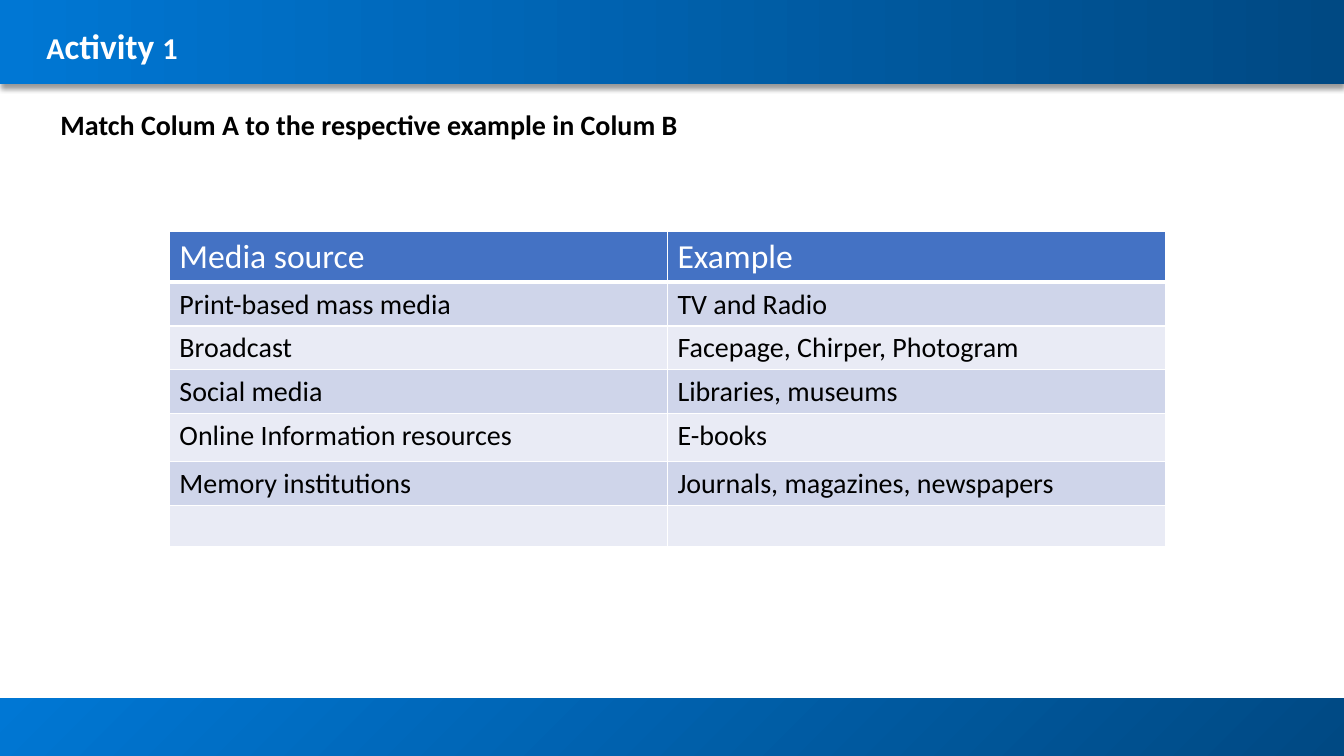
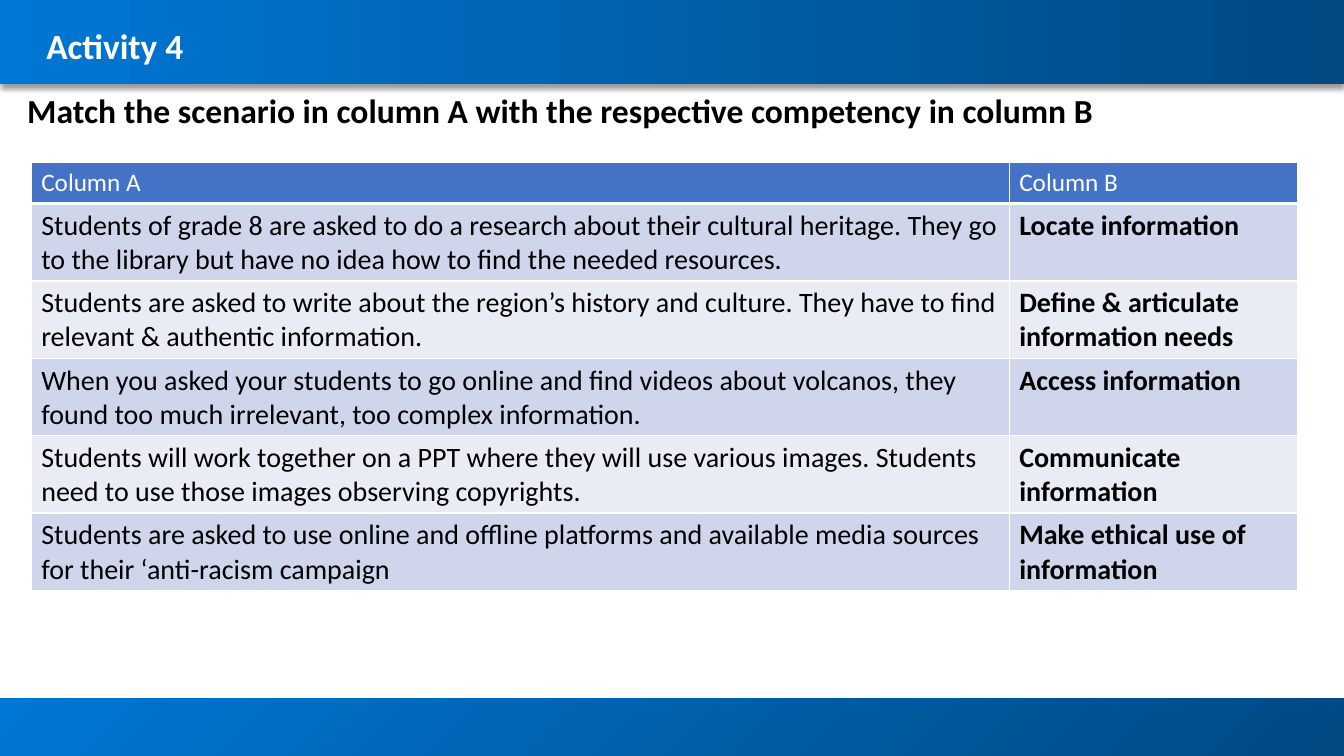
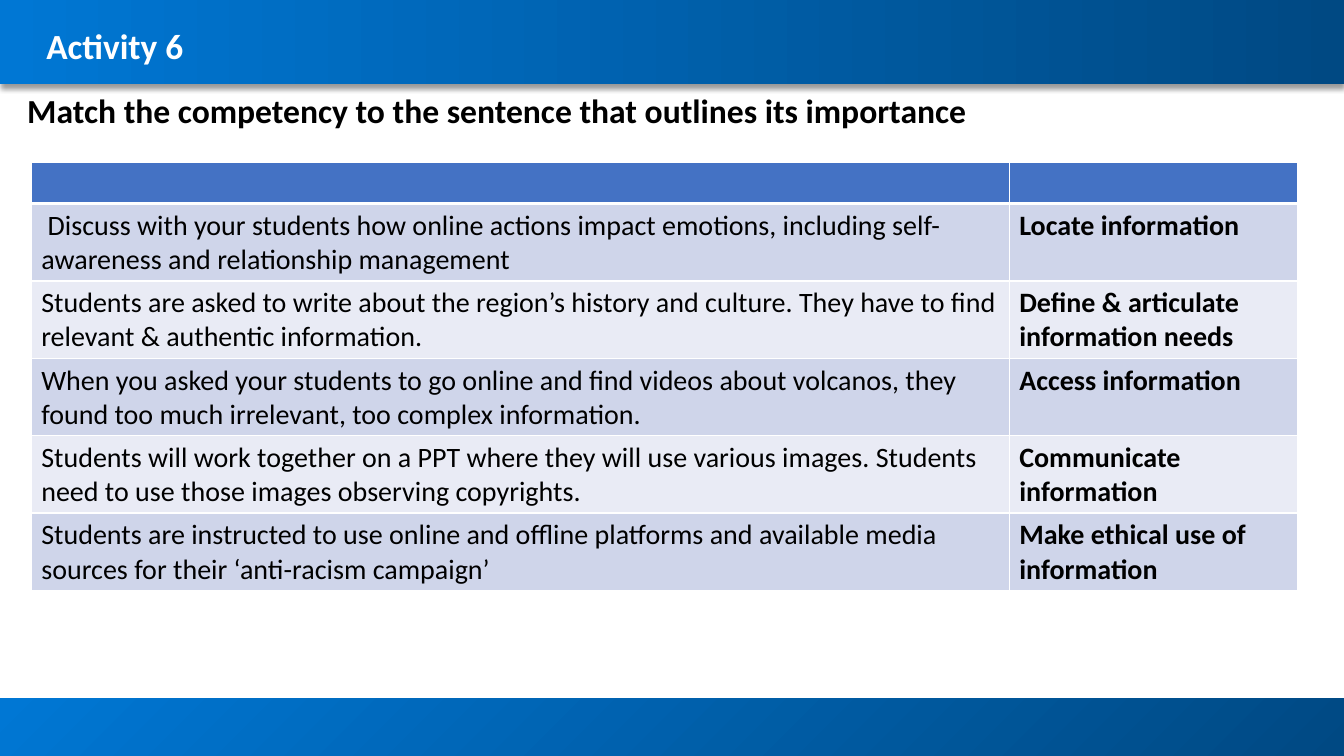
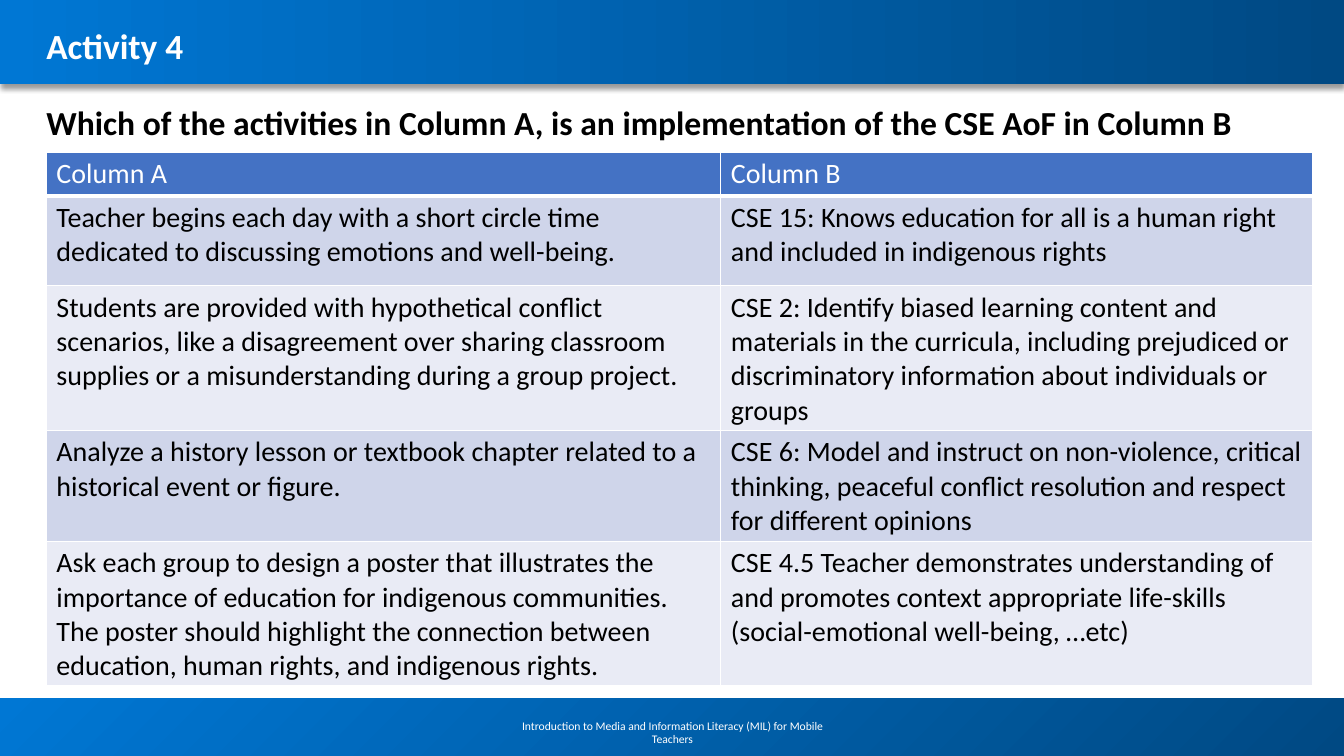
from dataclasses import dataclass

from lxml import etree
from pptx import Presentation
from pptx.dml.color import RGBColor
from pptx.enum.shapes import MSO_SHAPE as Preset
from pptx.enum.text import MSO_ANCHOR as Anchor, PP_ALIGN as Align
from pptx.oxml.ns import qn
from pptx.util import Inches, Pt

WHITE, BLACK = "FFFFFF", "000000"
BRIGHT, DEEP = "0077D4", "004983"
HEADER_FILL = "4472C4"
STRIPES = ("CFD5EA", "E9EBF5")
FONT = "Calibri"
SLIDE_WIDTH, SLIDE_HEIGHT = 13.33, 7.5
FOOTER_TOP = 6.93
FOOTER_TEXT = "Introduction to Media and Information Literacy (MIL) for Mobile Teachers"


@dataclass(frozen=True)
class Box:
    left: float
    top: float
    width: float
    height: float

    def lengths(self) -> tuple:
        return tuple(map(Inches, (self.left, self.top, self.width, self.height)))


@dataclass(frozen=True)
class Span:
    text: str
    size: float
    color: str = BLACK
    bold: bool = False


@dataclass(frozen=True)
class Grid:
    box: Box
    columns: tuple
    heights: tuple
    rows: tuple
    header_size: float
    bold_answers: bool = False


@dataclass(frozen=True)
class Activity:
    title: tuple
    task: Span
    task_box: Box
    grid: Grid
    footer: str = ""


TITLE_BOX = Box(0.46, 0.17, 12.41, 0.5)
FOOTER_BOX = Box(4.89, 7.1, 3.56, 0.24)


def color(value: str) -> RGBColor:
    return RGBColor.from_string(value)


def apply(target, values: dict) -> None:
    for name, value in values.items():
        setattr(target, name, value)


def write(paragraph, spans: tuple, layout: dict) -> None:
    apply(paragraph, layout)
    for span in spans:
        run = paragraph.add_run()
        run.text = span.text
        apply(run.font, {"name": FONT, "size": Pt(span.size), "bold": span.bold})
        run.font.color.rgb = color(span.color)


def add_text(slide, box: Box, spans: tuple, frame: dict, layout: dict) -> None:
    text_frame = slide.shapes.add_textbox(*box.lengths()).text_frame
    apply(text_frame, {"word_wrap": True, **frame})
    write(text_frame.paragraphs[0], spans, layout)


def add_band(slide, box: Box, stops: tuple, angle: float):
    band = slide.shapes.add_shape(Preset.RECTANGLE, *box.lengths())
    band.shadow.inherit = False
    band.line.fill.background()
    band.fill.gradient()
    band.fill.gradient_angle = angle
    for stop, value in zip(band.fill.gradient_stops, stops):
        stop.color.rgb = color(value)
    return band


def add_shadow(shape) -> None:
    effects = shape.element.spPr.find(qn("a:effectLst"))
    shadow = etree.SubElement(
        effects, qn("a:outerShdw"), blurRad=str(Pt(4)), dist=str(Pt(3)),
        dir="5400000", algn="t", rotWithShape="0")
    tone = etree.SubElement(shadow, qn("a:srgbClr"), val=BLACK)
    etree.SubElement(tone, qn("a:alpha"), val="40000")


def add_borders(cell, widths: dict) -> None:
    properties = cell._tc.get_or_add_tcPr()
    for position, (side, width) in enumerate(widths.items()):
        line = etree.Element(qn(f"a:ln{side}"), w=str(Pt(width)))
        fill = etree.SubElement(line, qn("a:solidFill"))
        etree.SubElement(fill, qn("a:srgbClr"), val=WHITE)
        properties.insert(position, line)


def add_grid(slide, grid: Grid) -> None:
    frame = slide.shapes.add_table(
        len(grid.rows), len(grid.columns), *grid.box.lengths())
    table = frame.table
    for column, width in zip(table.columns, grid.columns):
        column.width = Inches(width)
    for row, height in zip(table.rows, grid.heights):
        row.height = Inches(height)
    frame.height = Inches(grid.box.height)
    for r, texts in enumerate(grid.rows):
        header = r == 0
        for c, text in enumerate(texts):
            cell = table.cell(r, c)
            cell.fill.solid()
            cell.fill.fore_color.rgb = color(
                HEADER_FILL if header else STRIPES[(r - 1) % 2])
            add_borders(cell, {"L": 1, "R": 1, "T": 1, "B": 3 if header else 1})
            if not text:
                continue
            span = (Span(text, grid.header_size, WHITE) if header
                    else Span(text, 20, bold=grid.bold_answers and c == 1))
            write(cell.text_frame.paragraphs[0], (span,), {})


def add_activity(deck, activity: Activity) -> None:
    slide = deck.slides.add_slide(deck.slide_layouts[6])
    add_band(slide, Box(0, FOOTER_TOP, SLIDE_WIDTH, SLIDE_HEIGHT - FOOTER_TOP),
             (DEEP, BRIGHT), 135)
    add_shadow(add_band(slide, Box(0, 0, SLIDE_WIDTH, 0.83), (BRIGHT, DEEP), 0))
    if activity.footer:
        add_text(slide, FOOTER_BOX, (Span(activity.footer, 8.3, WHITE),), {},
                 {"alignment": Align.CENTER, "line_spacing": 0.9})
    flush = dict.fromkeys(
        ("margin_left", "margin_top", "margin_right", "margin_bottom"), Inches(0))
    add_text(slide, activity.task_box, (activity.task,), flush, {})
    add_text(slide, TITLE_BOX, activity.title,
             {**flush, "vertical_anchor": Anchor.MIDDLE}, {"line_spacing": 1.16})
    add_grid(slide, activity.grid)


def heading(text: str, size: float = 25.2) -> Span:
    return Span(text, size, WHITE, True)


def competency_grid(header: tuple, first: str, last: str) -> Grid:
    scenarios = (
        first,
        "Students are asked to write about the region’s history and culture. "
        "They have to find relevant & authentic information.",
        "When you asked your students to go online and find videos about volcanos, "
        "they found too much irrelevant, too complex information.",
        "Students will work together on a PPT where they will use various images. "
        "Students need to use those images observing copyrights.",
        last,
    )
    competencies = (
        "Locate information",
        "Define & articulate information needs",
        "Access information",
        "Communicate information",
        "Make ethical use of information",
    )
    return Grid(Box(0.31, 1.61, 12.57, 4.24), (9.7, 2.86),
                (0.41, 0.41, 0.41, 0.41, 0.57, 0.41),
                (header, *zip(scenarios, competencies)), 18, True)


COMPETENCY_TASK_BOX = Box(0.27, 0.89, 12.41, 0.5)
COLUMN_NAMES = ("Column A", "Column B")

MEDIA_GRID = Grid(
    Box(1.68, 2.3, 9.88, 3.12), (4.94, 4.94),
    (0.41, 0.41, 0.41, 0.41, 0.48, 0.41, 0.41),
    (
        ("Media source", "Example"),
        ("Print-based mass media", "TV and Radio"),
        ("Broadcast", "Facepage, Chirper, Photogram"),
        ("Social media", "Libraries, museums"),
        ("Online Information resources", "E-books"),
        ("Memory institutions", "Journals, magazines, newspapers"),
        ("", ""),
    ), 24)

CSE_GRID = Grid(
    Box(0.46, 1.51, 12.57, 5.29), (6.69, 5.87), (0.38, 0.89, 0.85, 0.85, 0.85),
    (
        COLUMN_NAMES,
        ("Teacher begins each day with a short circle time dedicated to discussing "
         "emotions and well-being.",
         "CSE 15: Knows education for all is a human right and included in "
         "indigenous rights"),
        ("Students are provided with hypothetical conflict scenarios, like a "
         "disagreement over sharing classroom supplies or a misunderstanding "
         "during a group project.",
         "CSE 2: Identify biased learning content and materials in the curricula, "
         "including prejudiced or discriminatory information about individuals or "
         "groups"),
        ("Analyze a history lesson or textbook chapter related to a historical "
         "event or figure.",
         "CSE 6: Model and instruct on non-violence, critical thinking, peaceful "
         "conflict resolution and respect for different opinions"),
        ("Ask each group to design a poster that illustrates the importance of "
         "education for indigenous communities. The poster should highlight the "
         "connection between education, human rights, and indigenous rights.",
         "CSE 4.5 Teacher demonstrates understanding of and promotes context "
         "appropriate life-skills (social-emotional well-being, …etc)"),
    ), 20)

ACTIVITIES = (
    Activity(
        (heading("A", 21.6), heading("ctivity "), heading("1", 21.6)),
        Span("Match Colum A to the respective example in Colum B", 20, bold=True),
        Box(0.6, 1.07, 12.04, 5.87), MEDIA_GRID),
    Activity(
        (heading("Activity 4"),),
        Span("Match the scenario in column A with the respective competency in "
             "column B", 24, bold=True),
        COMPETENCY_TASK_BOX,
        competency_grid(
            COLUMN_NAMES,
            "Students of grade 8 are asked to do a research about their cultural "
            "heritage. They go to the library but have no idea how to find the "
            "needed resources.",
            "Students are asked to use online and offline platforms and available "
            "media sources for their ‘anti-racism campaign")),
    Activity(
        (heading("Activity 6"),),
        Span("Match the competency to the sentence that outlines its importance",
             24, bold=True),
        COMPETENCY_TASK_BOX,
        competency_grid(
            ("", ""),
            " Discuss with your students how online actions impact emotions, "
            "including self-awareness and relationship management",
            "Students are instructed to use online and offline platforms and "
            "available media sources for their ‘anti-racism campaign’")),
    Activity(
        (heading("Activity 4"),),
        Span("Which of the activities in Column A, is an implementation of the CSE "
             "AoF in Column B", 24, bold=True),
        Box(0.46, 1.01, 12.41, 0.5), CSE_GRID, FOOTER_TEXT),
)


def main() -> None:
    deck = Presentation()
    apply(deck, {"slide_width": Inches(SLIDE_WIDTH),
                 "slide_height": Inches(SLIDE_HEIGHT)})
    for activity in ACTIVITIES:
        add_activity(deck, activity)
    deck.save("out.pptx")


if __name__ == "__main__":
    main()
